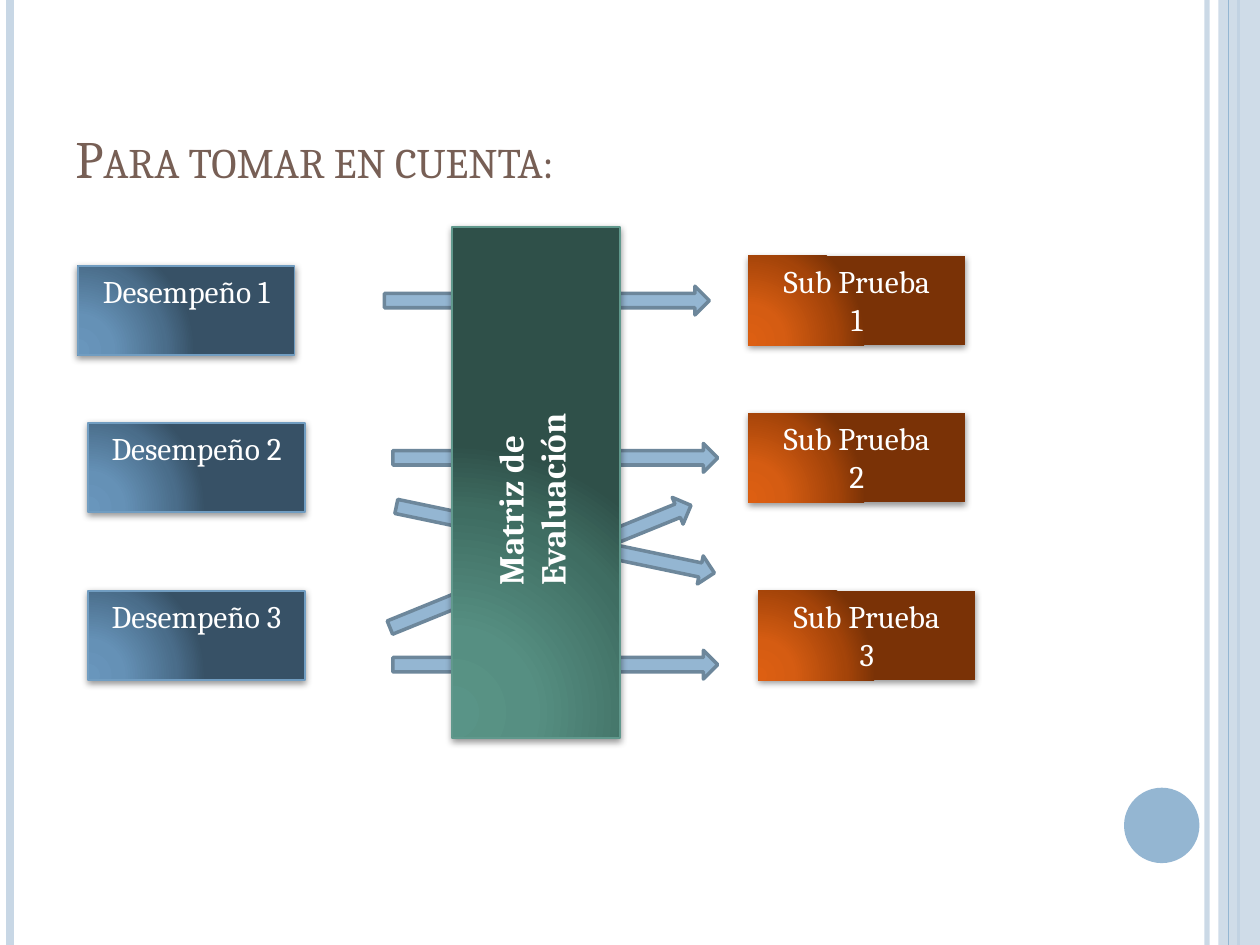
from lxml import etree
from pptx import Presentation
from pptx import util as u
from pptx.dml import color
from pptx.enum import shapes, text
from pptx.oxml import ns

FONT = "Cambria"
WHITE, SKY, PALE, STEEL, BROWN = "FFFFFF", "94B6D2", "C8D7E5", "6D879B", "775F55"
BLUE = ["6996BC", "6591B6", "4A6D8A", "375166"]
RUST = ["DD5F12", "D55C12", "A44409", "7A3206"]
GREEN = ["599487", "568F82", "3F6D62", "2F5049"]


def rgb(code):
    return color.RGBColor.from_string(code)


def add(parent, tag, **attrs):
    """Append a DrawingML child element with the given attributes."""
    node = etree.SubElement(parent, ns.qn("a:" + tag))
    for key, value in attrs.items():
        node.set(key, str(value))
    return node


def fade(fill, alpha):
    """Set the opacity, in percent, of a solid fill under the given element."""
    add(next(fill.iter(ns.qn("a:srgbClr"))), "alpha", val=alpha * 1000)


class Board:
    """Holds the slide and the style of its elements."""

    def __init__(self, slide):
        self.slide = slide
        self.items = slide.shapes

    def rule(self, x, width, hue, alpha=None):
        """Draw a full-height vertical line."""
        line = self.items.add_connector(
            shapes.MSO_CONNECTOR.STRAIGHT, u.Cm(x), 0, u.Cm(x), u.Cm(19.05))
        line.line.color.rgb = rgb(hue)
        line.line.width = u.Pt(width)
        props = line._element.spPr
        if alpha:
            fade(props, alpha)
        add(props, "effectLst")

    def shape(self, kind, x, y, w, h, fill=None, edge=None, width=1):
        item = self.items.add_shape(kind, u.Cm(x), u.Cm(y), u.Cm(w), u.Cm(h))
        item.shadow.inherit = False
        if fill:
            item.fill.solid()
            item.fill.fore_color.rgb = rgb(fill)
        if edge:
            item.line.color.rgb = rgb(edge)
            item.line.width = u.Pt(width)
        else:
            item.line.fill.background()
        return item

    def block(self, x, y, w, h, hues, edge=None):
        """Draw a rectangle with a radial gradient and a soft shadow."""
        item = self.shape(shapes.MSO_SHAPE.RECTANGLE, x, y, w, h, edge=edge)
        props = item._element.spPr
        grad = add(props, "gradFill", rotWithShape=1)
        stops = add(grad, "gsLst")
        for pos, hue in zip((0, 30, 75, 100), hues):
            add(add(stops, "gs", pos=pos * 1000), "srgbClr", val=hue)
        glow = add(grad, "path", path="circle")
        add(glow, "fillToRect", l=5000, t=100000, r=120000, b=10000)
        props.find(ns.qn("a:prstGeom")).addnext(grad)
        shade = add(props.find(ns.qn("a:effectLst")), "outerShdw",
                    blurRad=u.Pt(4), dist=u.Pt(1.6), dir=5400000, rotWithShape=0)
        add(add(shade, "srgbClr", val="000000"), "alpha", val=42000)
        return item

    def card(self, x, y, words, hues, edge=None):
        item = self.block(x, y, 4.37, 1.8, hues, edge)
        self.letter(item.text_frame, words, 18, align=text.PP_ALIGN.CENTER)

    def arrow(self, x, y, turn=0):
        item = self.shape(shapes.MSO_SHAPE.RIGHT_ARROW, x, y, 6.55, 0.58, SKY, STEEL, 2)
        item.rotation = turn

    def label(self, x, y, w, h, words, size, **style):
        item = self.items.add_textbox(u.Cm(x), u.Cm(y), u.Cm(w), u.Cm(h))
        self.letter(item.text_frame, words, size, **style)
        return item

    def letter(self, frame, words, size, hue=WHITE, bold=False,
               align=text.PP_ALIGN.LEFT, anchor=text.MSO_ANCHOR.TOP):
        """Fill a text frame with styled words."""
        frame.text = words
        frame.word_wrap = True
        frame.vertical_anchor = anchor
        for para in frame.paragraphs:
            para.alignment = align
            for run in para.runs:
                run.font.name = FONT
                run.font.size = u.Pt(size)
                run.font.bold = bold
                run.font.color.rgb = rgb(hue)


def main():
    deck = Presentation()
    deck.slide_width, deck.slide_height = u.Cm(25.4), u.Cm(19.05)
    board = Board(deck.slides.add_slide(deck.slide_layouts[6]))

    board.rule(24.33, 3, PALE, 93)
    board.rule(0.2, 4.5, PALE)
    board.rule(24.97, 1.5, SKY)
    band = board.shape(shapes.MSO_SHAPE.RECTANGLE, 24.56, 0, 0.84, 19.05, PALE)
    fade(band._element.spPr, 87)
    board.rule(24.77, 0.75, SKY)
    board.shape(shapes.MSO_SHAPE.OVAL, 22.66, 15.88, 1.52, 1.52, SKY)

    title = board.label(1.27, 0.76, 20.75, 3.18, "Para tomar en cuenta:", 30,
                        hue=BROWN, anchor=text.MSO_ANCHOR.BOTTOM)
    for run in title.text_frame.paragraphs[0].runs:
        run.font._element.set("cap", "small")

    tasks = [(1.57, 5.36), (1.78, 8.53), (1.78, 11.91)]
    tests = [(15.09, 5.16), (15.09, 8.33), (15.29, 11.91)]
    for num, (x, y) in enumerate(tasks, 1):
        board.card(x, y, f"Desempeño {num}", BLUE, "719DC1")
    for num, (x, y) in enumerate(tests, 1):
        board.card(x, y, f"Sub Prueba\n{num}", RUST)

    for spot in [(7.75, 5.77), (7.92, 8.94), (7.92, 13.11),
                 (7.92, 10.59, 11.8), (7.62, 11.13, 337.9)]:
        board.arrow(*spot)

    board.block(9.12, 4.57, 3.38, 10.31, GREEN, "60988C")
    matrix = board.label(8.15, 8.51, 5.11, 1.96, "Matriz de Evaluación", 20, bold=True)
    matrix.rotation = 270

    deck.save("out.pptx")


if __name__ == "__main__":
    main()
